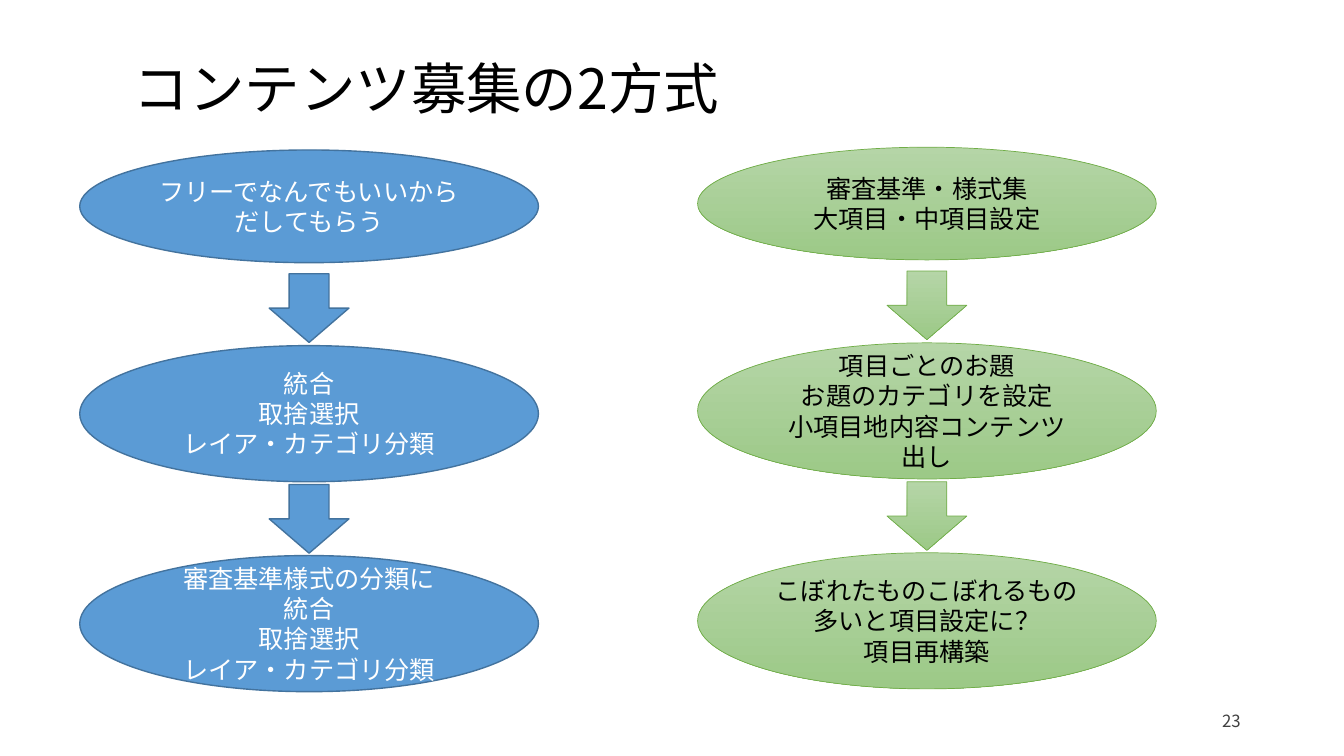
import pptx
import pptx.dml.color
import pptx.enum.shapes
import pptx.enum.text
import pptx.util
from lxml import etree

Cm = pptx.util.Cm
Pt = pptx.util.Pt
SHAPE = pptx.enum.shapes.MSO_SHAPE
ALIGN = pptx.enum.text.PP_ALIGN
MIDDLE = pptx.enum.text.MSO_ANCHOR.MIDDLE

JAPANESE_FONT = "Noto Sans CJK JP"
BODY_FONT = "Quicksand"
DRAWING_NS = "http://schemas.openxmlformats.org/drawingml/2006/main"

# Flow geometry in centimetres; offsets run from the top of a column
STEP_WIDTH = 11.56
STEPS = [(0, 2.84), (4.93, 3.43), (10.22, 3.43)]
ARROW_OFFSETS = [3.12, 8.43]
ARROW_WIDTH, ARROW_HEIGHT = 2.01, 1.73

FREE_FLOW = {
    "left": 2.01, "top": 3.78,
    "fill": ["5B9BD5"], "line": "43739E", "weight": 1, "ink": "FFFFFF",
    "steps": [
        "フリーでなんでもいいから\nだしてもらう",
        "統合\n取捨選択\nレイア・カテゴリ分類",
        "審査基準様式の分類に\n統合\n取捨選択\nレイア・カテゴリ分類",
    ],
}
THEMED_FLOW = {
    "left": 17.58, "top": 3.71,
    "fill": ["B5D5A7", "9CC987"], "line": "70AD47", "weight": 0.5, "ink": "000000",
    "steps": [
        "審査基準・様式集\n大項目・中項目設定",
        "項目ごとのお題\nお題のカテゴリを設定\n小項目地内容コンテンツ\n出し",
        "こぼれたものこぼれるもの\n多いと項目設定に？\n項目再構築",
    ],
}


def color(code):
    return pptx.dml.color.RGBColor.from_string(code)


def write(box, text, size, ink, align, font=JAPANESE_FONT):
    frame = box.text_frame
    frame.text = text
    frame.word_wrap = True
    frame.vertical_anchor = MIDDLE
    for para in frame.paragraphs:
        para.alignment = align
        for span in para.runs:
            span.font.size = Pt(size)
            span.font.name = font
            span.font.color.rgb = color(ink)
            east_asian = etree.SubElement(span.font._element, f"{{{DRAWING_NS}}}ea")
            east_asian.set("typeface", JAPANESE_FONT)


def add_flow_shape(page, kind, flow, left, offset, width, height):
    shape = page.shapes.add_shape(
        kind, Cm(left), Cm(flow["top"] + offset), Cm(width), Cm(height))
    shape.shadow.inherit = False
    shape.line.color.rgb = color(flow["line"])
    shape.line.width = Pt(flow["weight"])
    if len(flow["fill"]) == 1:
        shape.fill.solid()
        shape.fill.fore_color.rgb = color(flow["fill"][0])
    else:
        # Top-to-bottom gradient
        shape.fill.gradient()
        shape.fill.gradient_angle = 270
        for stop, code in zip(shape.fill.gradient_stops, flow["fill"]):
            stop.color.rgb = color(code)
    return shape


def add_flow(page, flow):
    for text, (offset, height) in zip(flow["steps"], STEPS):
        step = add_flow_shape(
            page, SHAPE.OVAL, flow, flow["left"], offset, STEP_WIDTH, height)
        write(step, text, 18, flow["ink"], ALIGN.CENTER, BODY_FONT)
    arrow_left = flow["left"] + (STEP_WIDTH - ARROW_WIDTH) / 2
    for offset in ARROW_OFFSETS:
        add_flow_shape(
            page, SHAPE.DOWN_ARROW, flow, arrow_left, offset, ARROW_WIDTH, ARROW_HEIGHT)


def add_title(page, text):
    title = page.shapes.title
    title.left, title.top = Cm(3.12), Cm(1.19)
    title.width, title.height = Cm(29.21), Cm(2.03)
    write(title, text, 39.6, "000000", ALIGN.LEFT)


def add_page_number(page, number):
    box = page.shapes.add_textbox(Cm(22.43), Cm(17.65), Cm(9.09), Cm(1.02))
    write(box, number, 12, "404040", ALIGN.RIGHT)


def main():
    deck = pptx.Presentation()
    deck.slide_width, deck.slide_height = Cm(33.87), Cm(19.05)
    page = deck.slides.add_slide(deck.slide_layouts.get_by_name("Title Only"))

    # Heading and page number
    add_title(page, "コンテンツ募集の2方式")
    add_page_number(page, "23")

    # The two ways of collecting content
    for flow in (FREE_FLOW, THEMED_FLOW):
        add_flow(page, flow)

    deck.save("out.pptx")


if __name__ == "__main__":
    main()
